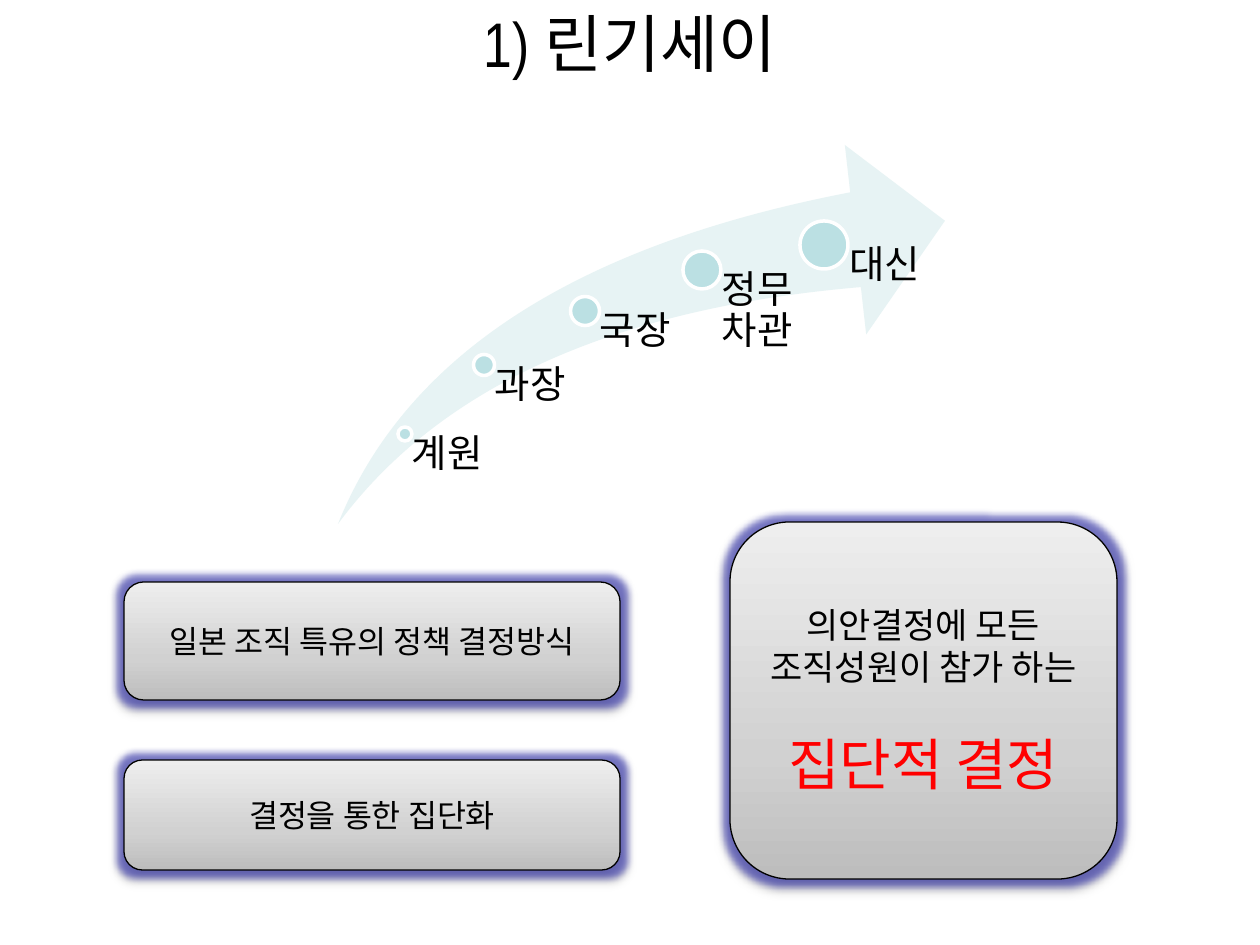
"""Build the slide on step-by-step approval and collective decisions."""
from copy import deepcopy
from dataclasses import dataclass

from lxml import etree
from pptx import Presentation
from pptx.dml.color import RGBColor
from pptx.enum.shapes import MSO_SHAPE
from pptx.enum.text import MSO_ANCHOR, PP_ALIGN
from pptx.oxml.ns import qn
from pptx.util import Emu, Pt

ELLIPSE = MSO_SHAPE.OVAL
ROUNDED = MSO_SHAPE.ROUNDED_RECTANGLE
SWOOSH = MSO_SHAPE.SWOOSH_ARROW
TOP, MIDDLE = MSO_ANCHOR.TOP, MSO_ANCHOR.MIDDLE
LEFT, CENTER = PP_ALIGN.LEFT, PP_ALIGN.CENTER

BLACK = RGBColor(0x00, 0x00, 0x00)
WHITE = RGBColor(0xFF, 0xFF, 0xFF)
RED = RGBColor(0xFF, 0x00, 0x00)
TEAL = RGBColor(0xBB, 0xE0, 0xE3)
PALE_TEAL = RGBColor(0xE7, 0xF3, 0xF4)
GLOW = RGBColor(0x33, 0x33, 0xB0)
GRADIENT = (
    (0, RGBColor(0xBD, 0xBD, 0xBD)),
    (35, RGBColor(0xD1, 0xD1, 0xD1)),
    (100, RGBColor(0xEE, 0xEE, 0xEE)),
)
KOREAN_FONT = "Noto Sans CJK KR"
EMU_PER_PX = 914400 / 126
ARROW_BOX = (338, 145, 607, 379)
DIAGRAM_BOTTOM = 524


@dataclass(frozen=True)
class Line:
    text: str
    size: int
    font: str = KOREAN_FONT
    color: RGBColor = BLACK
    align: PP_ALIGN = CENTER
    spacing: float = 1.0
    before: int = 0


@dataclass(frozen=True)
class Step:
    name: str
    center_x: int
    center_y: int
    diameter: int
    label_width: int


@dataclass(frozen=True)
class Card:
    box: tuple[int, int, int, int]
    lines: tuple[Line, ...]


STEPS = (
    Step("계원", 405, 434, 14, 79),
    Step("과장", 484, 365, 21, 101),
    Step("국장", 585, 311, 29, 117),
    Step("정무차관", 702, 270, 38, 121),
    Step("대신", 824, 245, 48, 121),
)
CARDS = (
    Card((124, 760, 496, 110), (Line("결정을 통한 집단화", 18),)),
    Card((730, 522, 387, 357), (
        Line("의안결정에 모든 조직성원이 참가 하는", 20),
        Line("집단적 결정", 32, color=RED, before=24),
    )),
    Card((124, 582, 496, 118), (Line("일본 조직 특유의 정책 결정방식", 18),)),
)


def px(length: float) -> Emu:
    return Emu(round(length * EMU_PER_PX))


def set_values(target, values: dict) -> None:
    for name, value in values.items():
        setattr(target, name, value)


def write_lines(text_frame, lines: tuple[Line, ...], anchor: MSO_ANCHOR) -> None:
    set_values(text_frame, {"word_wrap": True, "vertical_anchor": anchor})
    for index, line in enumerate(lines):
        paragraph = text_frame.add_paragraph() if index else text_frame.paragraphs[0]
        set_values(paragraph, {"alignment": line.align, "line_spacing": line.spacing})
        if line.before:
            paragraph.space_before = Pt(line.before)
        run = paragraph.add_run()
        run.text = line.text
        set_values(run.font, {"size": Pt(line.size), "name": line.font})
        run.font.color.rgb = line.color
        properties = run.font._element if hasattr(run.font, "_element") else run._r.get_or_add_rPr()
        etree.SubElement(properties, qn("a:ea"), typeface=KOREAN_FONT)


def add_text(shapes, box: tuple, line: Line, anchor: MSO_ANCHOR):
    text_box = shapes.add_textbox(*map(px, box))
    write_lines(text_box.text_frame, (line,), anchor)
    return text_box


def add_solid(shapes, kind: MSO_SHAPE, box: tuple, color: RGBColor):
    shape = shapes.add_shape(kind, *map(px, box))
    shape.shadow.inherit = False
    shape.fill.solid()
    shape.fill.fore_color.rgb = color
    shape.line.fill.background()
    return shape


def add_step(shapes, step: Step) -> None:
    radius = step.diameter / 2
    dot = add_solid(
        shapes, ELLIPSE,
        (step.center_x - radius, step.center_y - radius, step.diameter, step.diameter), TEAL,
    )
    dot.line.color.rgb = WHITE
    dot.line.width = Pt(2)
    label = add_text(
        shapes,
        (step.center_x, step.center_y, step.label_width, DIAGRAM_BOTTOM - step.center_y),
        Line(step.name, 22, "Roboto", align=LEFT, spacing=0.9), TOP,
    )
    set_values(label.text_frame, {
        "margin_left": px(round(step.diameter * 0.53)),
        "margin_top": 0, "margin_right": 0, "margin_bottom": 0,
    })


def apply_gradient(shape) -> None:
    shape.fill.gradient()
    shape.fill.gradient_angle = 90
    stop_list = shape._element.spPr.find(qn("a:gradFill")).find(qn("a:gsLst"))
    stop_list.append(deepcopy(stop_list[-1]))
    for stop, (position, color) in zip(shape.fill.gradient_stops, GRADIENT):
        stop.position = position / 100
        stop.color.rgb = color


def add_effect(effects, tag: str, color: RGBColor, opacity: int, **attributes: str) -> None:
    effect = etree.SubElement(effects, qn(tag), **attributes)
    tone = etree.SubElement(effect, qn("a:srgbClr"), val=str(color))
    etree.SubElement(tone, qn("a:alpha"), val=str(opacity * 1000))


def add_card(shapes, card: Card) -> None:
    shape = shapes.add_shape(ROUNDED, *map(px, card.box))
    apply_gradient(shape)
    shape.line.color.rgb = BLACK
    shape.line.width = Pt(0.75)
    shape.shadow.inherit = False
    effects = shape._element.spPr.find(qn("a:effectLst"))
    add_effect(effects, "a:glow", GLOW, 60, rad=str(Pt(8)))
    add_effect(effects, "a:outerShdw", BLACK, 32, blurRad=str(Pt(3.5)),
               dist=str(Pt(2.2)), dir="5400000", rotWithShape="0")
    write_lines(shape.text_frame, card.lines, MIDDLE)


def main() -> None:
    presentation = Presentation()
    set_values(presentation, {"slide_width": px(1260), "slide_height": px(945)})
    slide = presentation.slides.add_slide(presentation.slide_layouts[6])
    add_text(slide.shapes, (0, 0, 1260, 84), Line("1) 린기세이", 36, "Arial Narrow"), MIDDLE)
    diagram = slide.shapes.add_group_shape().shapes
    arrow = add_solid(diagram, SWOOSH, ARROW_BOX, PALE_TEAL)
    for index in range(2):
        arrow.adjustments[index] = 0.25
    for step in STEPS:
        add_step(diagram, step)
    for card in CARDS:
        add_card(slide.shapes, card)
    presentation.save("out.pptx")


if __name__ == "__main__":
    main()
